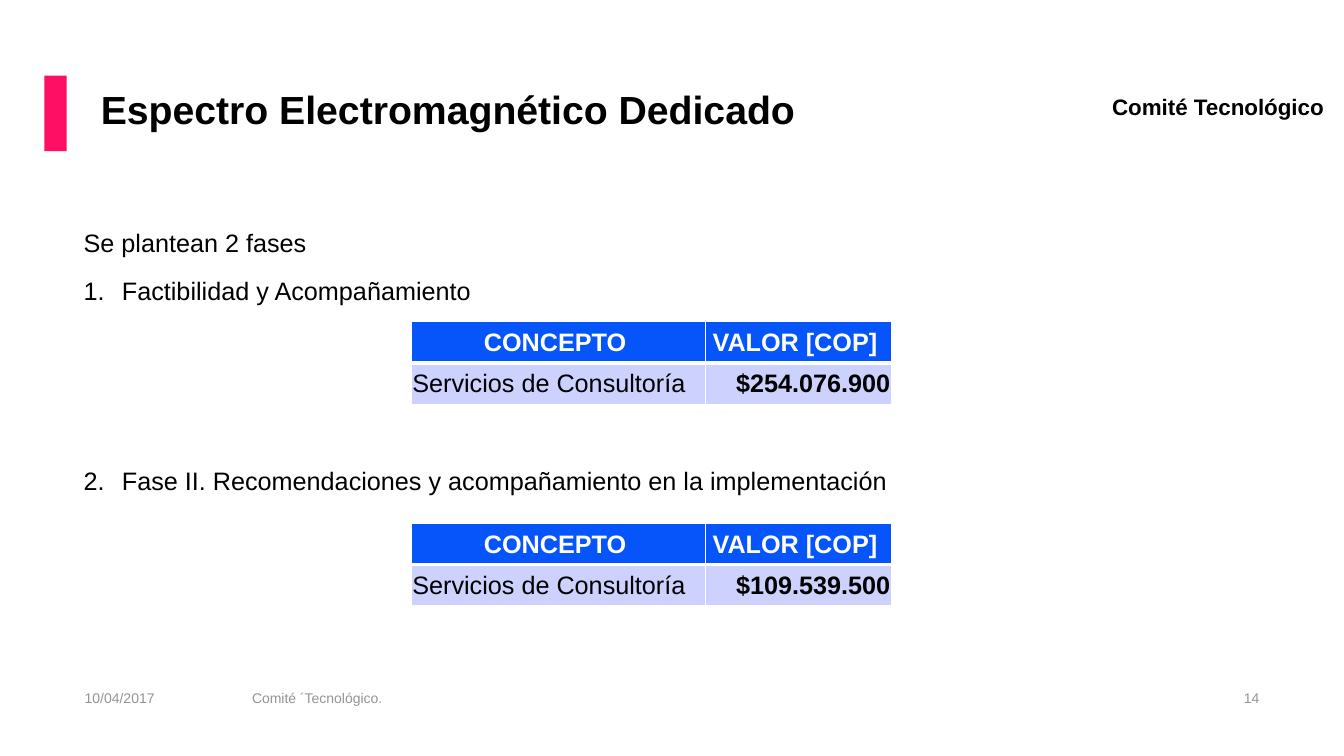
from lxml.etree import SubElement as Sub
from pptx import Presentation
from pptx.dml.color import RGBColor as RGB
from pptx.enum.shapes import MSO_SHAPE as Shape
from pptx.enum.text import MSO_ANCHOR as Anchor, PP_ALIGN as Align
from pptx.oxml.ns import qn
from pptx.util import Inches, Pt

INK, WHITE, GRAY = "000000", "FFFFFF", "949494"
PINK, BLUE, PALE = "FE0F64", "0655FA", "CCD1FD"


def paint(item, color):
    item.solid()
    item.fore_color.rgb = RGB.from_string(color)


def style(part, form):
    for name, value in form.items():
        setattr(part, name, value)


def write(para, text, size, color=INK, bold=False, **form):
    para.text = text
    style(para, form)
    style(para.font, {"name": "Arial", "size": Pt(size), "bold": bold})
    para.font.color.rgb = RGB.from_string(color)


def setup(frame, anchor=Anchor.TOP, wrap=True, right=0):
    style(frame, {"margin_left": 0, "margin_top": 0, "margin_bottom": 0,
                  "margin_right": Inches(right), "word_wrap": wrap,
                  "vertical_anchor": anchor})
    return frame


def add_text(slide, box, **form):
    return setup(slide.shapes.add_textbox(*map(Inches, box)).text_frame, **form)


def add_head(slide, left, top):
    bar = slide.shapes.add_shape(Shape.RECTANGLE, Inches(left), Inches(top),
                                 Inches(0.22), Inches(0.75))
    bar.shadow.inherit = False
    paint(bar.fill, PINK)
    bar.line.fill.background()
    title = slide.shapes.title
    style(title, {"left": Inches(left + 0.56), "top": Inches(top + 0.15),
                  "width": Inches(9.16), "height": Inches(0.43)})
    frame = setup(title.text_frame)
    write(frame.paragraphs[0], "Espectro Electromagnético Dedicado", 28,
          bold=True, alignment=Align.LEFT, line_spacing=0.9)
    frame = add_text(slide, (left + 10.59, top + 0.17, 2.13, 0.27), wrap=False)
    write(frame.paragraphs[0], "Comité Tecnológico", 16, bold=True)


def number(para):
    props = para._p.get_or_add_pPr()
    props.set("marL", str(Inches(0.38)))
    props.set("indent", str(-Inches(0.38)))
    Sub(props, qn("a:buFont"), typeface="+mj-lt")
    Sub(props, qn("a:buAutoNum"), type="arabicPeriod")


def add_body(slide, box, intro, steps):
    frame = add_text(slide, box, right=0.2)
    write(frame.paragraphs[0], intro, 18, space_after=Pt(6))
    for text, gap in steps:
        para = frame.add_paragraph()
        number(para)
        write(para, text, 18, space_before=Pt(gap), space_after=Pt(6))


def edge(cell, base):
    props = cell._tc.get_or_add_tcPr()
    for side, width in zip("LRTB", (1, 1, 1, base)):
        line = Sub(props, qn("a:ln" + side), w=str(Pt(width)))
        Sub(Sub(line, qn("a:solidFill")), qn("a:srgbClr"), val=WHITE)


def add_cost(slide, left, top, value):
    grid = slide.shapes.add_table(2, 2, Inches(left), Inches(top),
                                  Inches(4.76), Inches(0.81)).table
    for col, width in zip(grid.columns, (2.92, 1.84)):
        col.width = Inches(width)
    rows = (
        (BLUE, WHITE, 3, (("CONCEPTO ", True, Align.CENTER),
                          ("VALOR [COP] ", True, Align.CENTER))),
        (PALE, INK, 1, (("Servicios de Consultoría ", False, Align.JUSTIFY),
                        (value, True, Align.RIGHT))),
    )
    for row, (fill, color, base, items) in zip(grid.rows, rows):
        row.height = Inches(0.41)
        for cell, (text, bold, align) in zip(row.cells, items):
            style(cell, {"margin_left": Inches(0.01), "margin_right": Inches(0.01),
                         "margin_top": Inches(0.01), "margin_bottom": 0,
                         "vertical_anchor": Anchor.MIDDLE})
            edge(cell, base)
            paint(cell.fill, fill)
            write(cell.text_frame.paragraphs[0], text, 18, color, bold,
                  alignment=align)


def add_foot(slide, left, top):
    parts = (("10/04/2017", 0, 1.65, Align.LEFT),
             ("Comité ´Tecnológico.", 1.66, 9.16, Align.LEFT),
             ("14", 10.82, 0.83, Align.RIGHT))
    for text, shift, width, align in parts:
        frame = add_text(slide, (left + shift, top, width, 0.17),
                         anchor=Anchor.MIDDLE)
        write(frame.paragraphs[0], text, 10, GRAY, alignment=align,
              line_spacing=0.9)


def main():
    deck = Presentation()
    style(deck, {"slide_width": Inches(13.33), "slide_height": Inches(7.5)})
    slide = deck.slides.add_slide(deck.slide_layouts[5])
    add_head(slide, 0.44, 0.75)
    add_body(slide, (0.83, 2.25, 11.66, 4.49), "Se plantean 2 fases", (
        ("Factibilidad y Acompañamiento", 7),
        ("Fase II. Recomendaciones y acompañamiento en la implementación", 108),
    ))
    for step, value in enumerate(("$254.076.900", "$109.539.500")):
        add_cost(slide, 4.08, 3.19 + 2 * step, value)
    add_foot(slide, 0.84, 6.85)
    deck.save("out.pptx")


if __name__ == "__main__":
    main()
